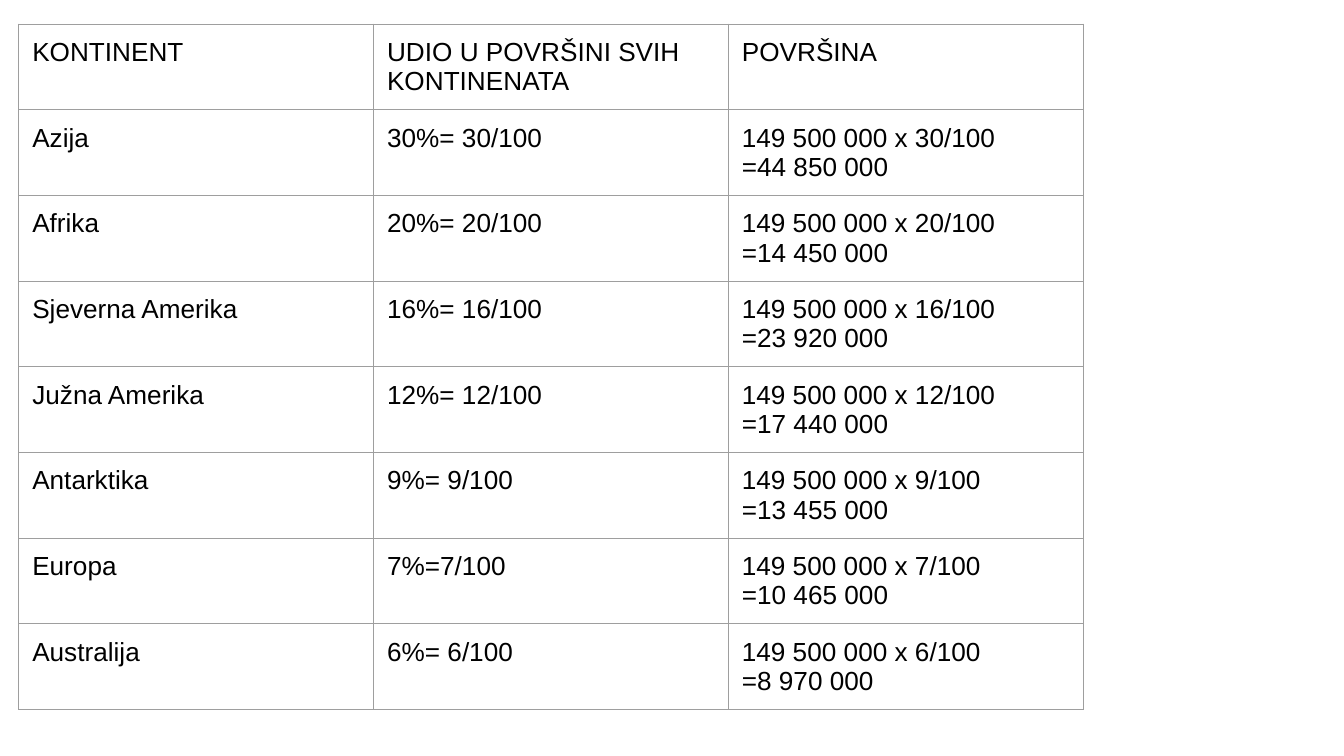
"""Build a slide with a table of continents and their areas."""
import dataclasses
import typing

import lxml.etree
import pptx
import pptx.dml.color
import pptx.oxml.ns
import pptx.table
import pptx.util

Inches = pptx.util.Inches


@dataclasses.dataclass(frozen=True)
class Theme:
    font: str = "Arial"
    text_size: float = 14
    text_color: str = "000000"
    border_color: str = "9E9E9E"
    border_width: float = 0.75
    cell_margin: float = 0.1


class Continent(typing.NamedTuple):
    name: str
    percent: int
    area: str
    equals: str = "= "

    def cells(self) -> list[str]:
        fraction = f"{self.percent}/100"
        return [
            self.name,
            f"{self.percent}%{self.equals}{fraction}",
            f"149 500 000 x {fraction}\n={self.area}",
        ]


THEME = Theme()
HEADINGS = ["KONTINENT", "UDIO U POVRŠINI SVIH KONTINENATA", "POVRŠINA"]
CONTINENTS = [
    Continent("Azija", 30, "44 850 000"),
    Continent("Afrika", 20, "14 450 000"),
    Continent("Sjeverna Amerika", 16, "23 920 000"),
    Continent("Južna Amerika", 12, "17 440 000"),
    Continent("Antarktika", 9, "13 455 000"),
    Continent("Europa", 7, "10 465 000", "="),
    Continent("Australija", 6, "8 970 000"),
]
PAGE_WIDTH = 10
PAGE_HEIGHT = PAGE_WIDTH * 9 / 16
COLUMN_WIDTH = 2.64
ROW_HEIGHT = 0.42


def set_attributes(target: typing.Any, values: dict[str, typing.Any]) -> None:
    for name, value in values.items():
        setattr(target, name, value)


def draw_borders(cell: pptx.table._Cell) -> None:
    qualified = pptx.oxml.ns.qn
    properties = cell._tc.get_or_add_tcPr()
    width = str(int(pptx.util.Pt(THEME.border_width)))
    for position, side in enumerate(("lnL", "lnR", "lnT", "lnB")):
        line = lxml.etree.Element(qualified(f"a:{side}"), w=width)
        fill = lxml.etree.SubElement(line, qualified("a:solidFill"))
        lxml.etree.SubElement(fill, qualified("a:srgbClr"), val=THEME.border_color)
        properties.insert(position, line)


def fill_cell(cell: pptx.table._Cell, text: str) -> None:
    cell.text = text
    margin = Inches(THEME.cell_margin)
    set_attributes(cell, {f"margin_{side}": margin for side in ("left", "right", "top", "bottom")})
    cell.fill.background()
    draw_borders(cell)
    text_format = {"name": THEME.font, "size": pptx.util.Pt(THEME.text_size), "bold": False}
    for para in cell.text_frame.paragraphs:
        for span in para.runs:
            set_attributes(span.font, text_format)
            span.font.color.rgb = pptx.dml.color.RGBColor.from_string(THEME.text_color)


def main() -> None:
    deck = pptx.Presentation()
    deck.slide_width = Inches(PAGE_WIDTH)
    deck.slide_height = Inches(PAGE_HEIGHT)
    page = deck.slides.add_slide(deck.slide_layouts[6])
    rows = [HEADINGS] + [continent.cells() for continent in CONTINENTS]
    table = page.shapes.add_table(
        len(rows), len(HEADINGS), Inches(0.14), Inches(0.18),
        Inches(COLUMN_WIDTH * len(HEADINGS)), Inches(ROW_HEIGHT * len(rows)),
    ).table
    set_attributes(table, {"first_row": False, "horz_banding": False})
    for row_index, texts in enumerate(rows):
        for column_index, text in enumerate(texts):
            fill_cell(table.cell(row_index, column_index), text)
    deck.save("out.pptx")


if __name__ == "__main__":
    main()
